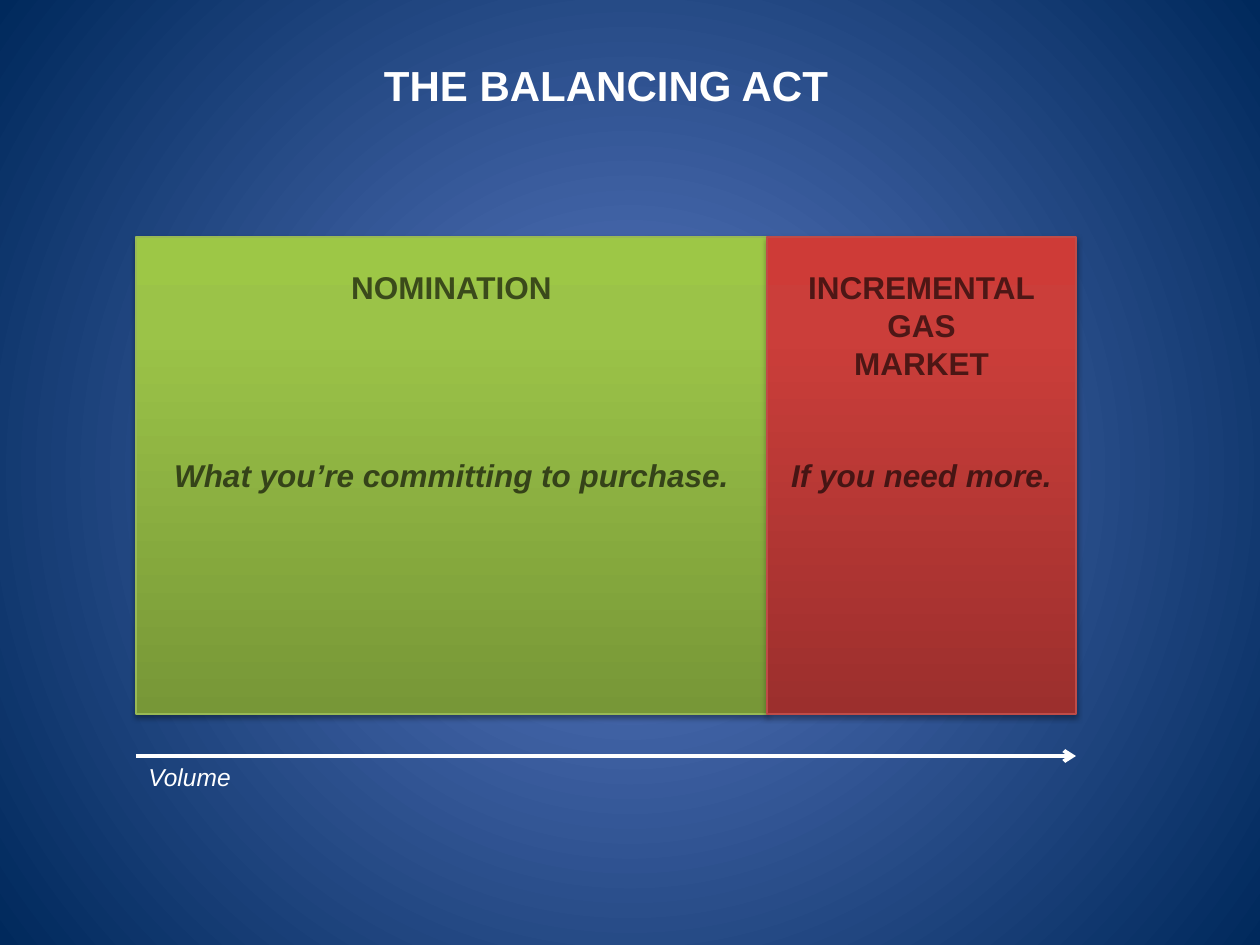
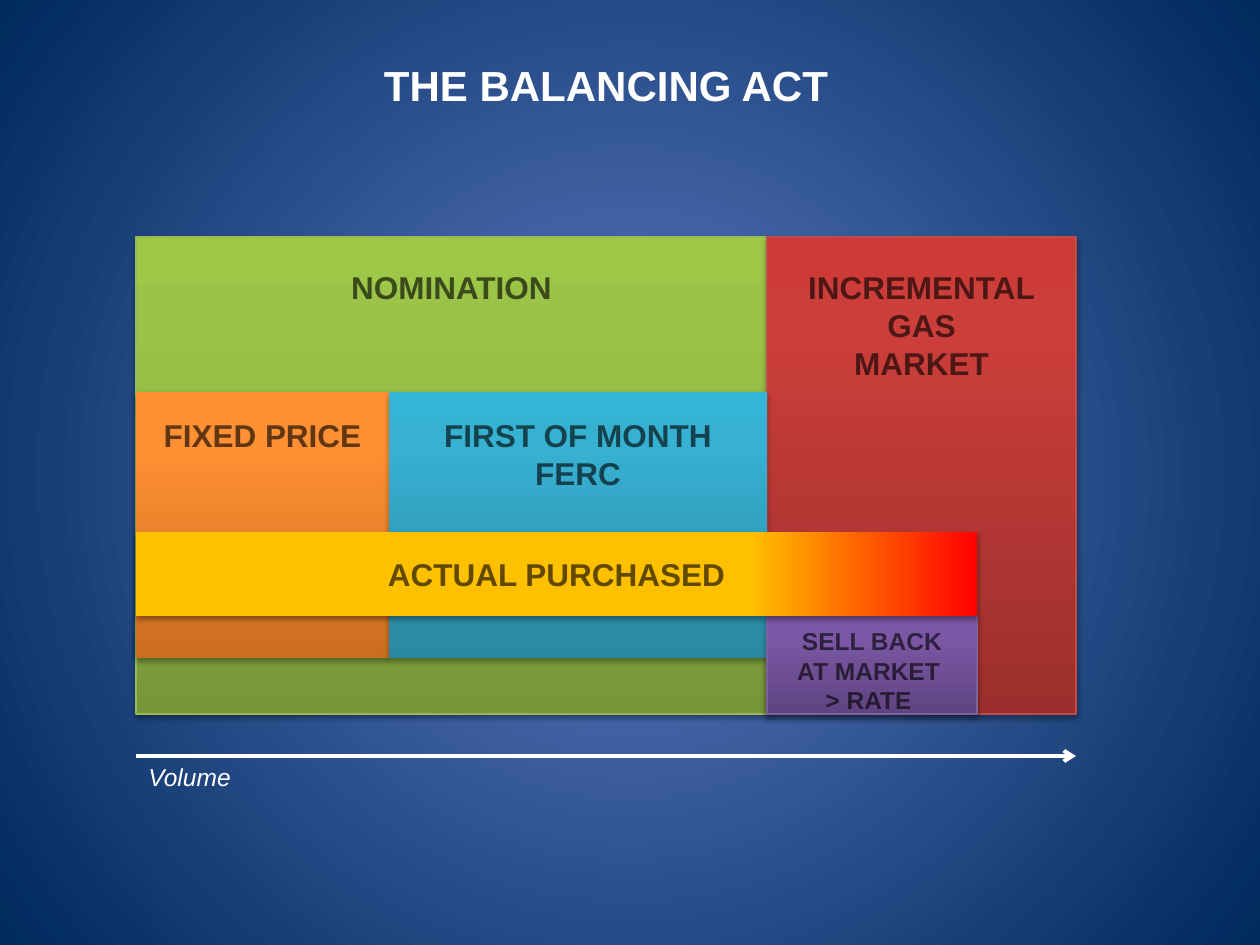
from lxml.etree import SubElement
from pptx import Presentation
from pptx.dml.color import RGBColor
from pptx.enum.shapes import MSO_CONNECTOR, MSO_SHAPE
from pptx.enum.text import MSO_ANCHOR, MSO_AUTO_SIZE, PP_ALIGN
from pptx.oxml.ns import qn
from pptx.util import Emu, Pt

SCALE = 914400 / 126
FONT = "Arial"
WHITE = RGBColor(0xFF, 0xFF, 0xFF)
BLACK = RGBColor(0x00, 0x00, 0x00)
GLOW = RGBColor(0x5E, 0x7C, 0xC5)
NAVY = RGBColor(0x00, 0x29, 0x5C)
GOLD = RGBColor(0xFF, 0xC0, 0x00)
RED = RGBColor(0xFF, 0x00, 0x00)
GREEN_EDGE = RGBColor(0x98, 0xB9, 0x55)
RED_EDGE = RGBColor(0xBF, 0x4C, 0x48)
PLUM_EDGE = RGBColor(0x7D, 0x60, 0xA0)


def shade(low, mid, top):
    """Return the stops of a block that darkens to its foot."""
    return [(0, low), (80, mid), (100, top)]


GREENS = shade(RGBColor(0x77, 0x97, 0x37), RGBColor(0x9B, 0xC3, 0x48), RGBColor(0x9D, 0xC7, 0x46))
REDS = shade(RGBColor(0x9C, 0x2F, 0x2D), RGBColor(0xCB, 0x3E, 0x3A), RGBColor(0xCE, 0x3B, 0x37))
TANS = shade(RGBColor(0xCC, 0x6E, 0x20), RGBColor(0xFF, 0x90, 0x34), RGBColor(0xFF, 0x91, 0x36))
BLUES = shade(RGBColor(0x2A, 0x88, 0xA2), RGBColor(0x37, 0xB1, 0xD2), RGBColor(0x34, 0xB4, 0xD6))
PLUMS = shade(RGBColor(0x5F, 0x44, 0x80), RGBColor(0x7B, 0x58, 0xA6), RGBColor(0x7C, 0x57, 0xA8))
BLAZE = [(0, GOLD), (73, GOLD), (100, RED)]

LEFT, SPLIT, RIGHT = 136, 767, 1076
TOP, FOOT = 237, 714
FIXED, SOLD = 389, 977
PRICE_TOP, PRICE_FOOT = 392, 658
BAR_TOP, BAR_FOOT = 532, 616
AXIS = 756


def px(size):
    """Turn px into EMU."""
    return Emu(round(size * SCALE))


def place(shape, x, y, wide, high):
    """Move and size a shape."""
    shape.left, shape.top, shape.width, shape.height = map(px, (x, y, wide, high))


def blend(props, stops, angle=None):
    """Swap a solid fill for a straight gradient, or a round one without angle."""
    solid = props.find(qn("a:solidFill"))
    grad = props.makeelement(qn("a:gradFill"), {"rotWithShape": "1"})
    props.replace(solid, grad)
    items = SubElement(grad, qn("a:gsLst"))
    for spot, tint in stops:
        stop = SubElement(items, qn("a:gs"), pos=str(spot * 1000))
        SubElement(stop, qn("a:srgbClr"), val=str(tint))
    if angle is None:
        ring = SubElement(grad, qn("a:path"), path="circle")
        SubElement(ring, qn("a:fillToRect"), l="50000", t="50000", r="50000", b="50000")
    else:
        SubElement(grad, qn("a:lin"), ang=str(angle * 60000), scaled="0")


def block(slide, x, y, right, foot, stops, edge=None, angle=270):
    """Draw a shaded rectangle with a soft shadow."""
    rect = slide.shapes.add_shape(
        MSO_SHAPE.RECTANGLE, px(x), px(y), px(right - x), px(foot - y))
    rect.fill.solid()
    props = rect.element.spPr
    blend(props, stops, angle)
    if edge is None:
        rect.line.fill.background()
    else:
        rect.line.color.rgb = edge
        rect.line.width = Pt(0.75)
    rect.shadow.inherit = False
    cast = SubElement(props.find(qn("a:effectLst")), qn("a:outerShdw"),
                      blurRad="40000", dist="23000", dir="5400000", rotWithShape="0")
    tint = SubElement(cast, qn("a:srgbClr"), val=str(BLACK))
    SubElement(tint, qn("a:alpha"), val="35000")


def write(shape, text, size, color, bold=True, slant=False, align=PP_ALIGN.CENTER):
    """Fill a shape with formatted text."""
    frame = shape.text_frame
    frame.text = text
    frame.word_wrap = True
    frame.auto_size = MSO_AUTO_SIZE.SHAPE_TO_FIT_TEXT
    frame.vertical_anchor = MSO_ANCHOR.TOP
    for para in frame.paragraphs:
        para.alignment = align
        for run in para.runs:
            font = run.font
            font.name, font.size, font.bold, font.italic = FONT, Pt(size), bold, slant
            font.color.rgb = color


def label(slide, text, x, y, right, high=50, size=18, slant=False):
    """Add a centred label in see-through black."""
    box = slide.shapes.add_textbox(px(x), px(y), px(right - x), px(high))
    write(box, text, size, BLACK, slant=slant)
    for tint in box.element.iter(qn("a:srgbClr")):
        SubElement(tint, qn("a:alpha"), val="62000")


def axis(slide):
    """Draw the volume arrow with its caption."""
    line = slide.shapes.add_connector(
        MSO_CONNECTOR.STRAIGHT, px(LEFT), px(AXIS), px(RIGHT), px(AXIS))
    line.line.color.rgb = WHITE
    line.line.width = Pt(2.25)
    SubElement(line.line._get_or_add_ln(), qn("a:tailEnd"), type="arrow")
    SubElement(line.element.spPr, qn("a:effectLst"))
    box = slide.shapes.add_textbox(px(LEFT), px(AXIS), px(126), px(43))
    write(box, "Volume", 14, WHITE, bold=False, slant=True, align=PP_ALIGN.LEFT)


def base(deck):
    """Add a slide with the title, the two markets and the axis."""
    slide = deck.slides.add_slide(deck.slide_layouts[5])
    title = slide.shapes.title
    place(title, LEFT, 53, RIGHT - LEFT, 63)
    write(title, "THE BALANCING ACT", 24, WHITE)
    block(slide, LEFT, TOP, SPLIT, FOOT, GREENS, GREEN_EDGE)
    block(slide, SPLIT, TOP, RIGHT, FOOT, REDS, RED_EDGE)
    label(slide, "NOMINATION", LEFT, 262, SPLIT)
    label(slide, "INCREMENTAL\nGAS\nMARKET", SPLIT, 262, RIGHT, 127)
    axis(slide)
    return slide


def notes(slide):
    """Explain the two markets."""
    label(slide, "What you’re committing to purchase.", LEFT, 450, SPLIT, slant=True)
    label(slide, "If you need more.", SPLIT, 450, RIGHT, slant=True)


def split(slide):
    """Show the price blocks, the sell-back and the purchased bar."""
    block(slide, LEFT, PRICE_TOP, FIXED, PRICE_FOOT, TANS)
    block(slide, FIXED, PRICE_TOP, SPLIT, PRICE_FOOT, BLUES)
    label(slide, "FIXED PRICE", LEFT, 410, FIXED)
    label(slide, "FIRST OF MONTH\nFERC", FIXED, 410, SPLIT, 89)
    block(slide, SPLIT, BAR_FOOT, SOLD, FOOT, PLUMS, PLUM_EDGE)
    label(slide, "SELL BACK AT MARKET \n> RATE ", SPLIT + 5, 620, SOLD - 5, 102, size=14)
    block(slide, LEFT, BAR_TOP, SOLD, BAR_FOOT, BLAZE, angle=0)
    label(slide, "ACTUAL PURCHASED", LEFT, 549, SOLD)


def main():
    """Build the deck."""
    deck = Presentation()
    deck.slide_width, deck.slide_height = px(1260), px(945)
    master = deck.slide_master
    master.background.fill.solid()
    blend(next(master.element.iter(qn("p:bgPr"))), [(0, GLOW), (100, NAVY)])
    notes(base(deck))
    split(base(deck))
    deck.save("out.pptx")


if __name__ == "__main__":
    main()
